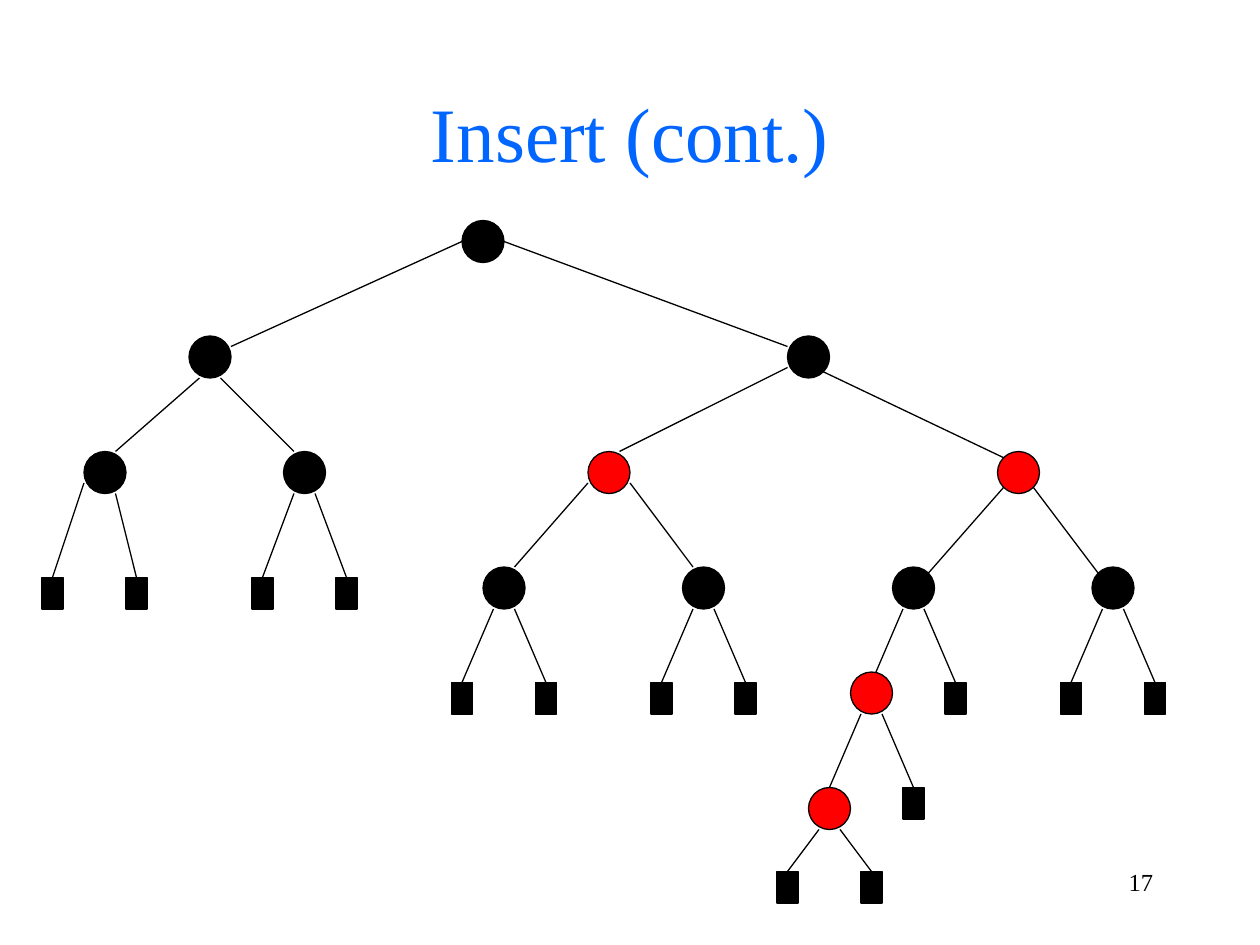
from lxml import etree
from pptx import Presentation
from pptx.dml.color import RGBColor
from pptx.enum.shapes import MSO_CONNECTOR, MSO_SHAPE
from pptx.enum.text import MSO_ANCHOR, PP_ALIGN
from pptx.oxml.ns import qn
from pptx.util import Pt

PX = 7620  # EMU per px, 120 px to the inch
STRAIGHT = MSO_CONNECTOR.STRAIGHT
CIRCLE, RECTANGLE = MSO_SHAPE.OVAL, MSO_SHAPE.RECTANGLE
TOP, MIDDLE = MSO_ANCHOR.TOP, MSO_ANCHOR.MIDDLE
CENTER, RIGHT = PP_ALIGN.CENTER, PP_ALIGN.RIGHT
TOP_SITE = 0
FONT = "Times New Roman"
COLORS = {"black": "000000", "red": "FF0000", "title": "0066FF"}
LINE_WIDTH = Pt(0.75)
NODE_SIZE = 40
LEAF_WIDTH, LEAF_HEIGHT = 20, 30

prs = Presentation()
prs.slide_width, prs.slide_height = 1200 * PX, 900 * PX
slide = prs.slides.add_slide(prs.slide_layouts[6])


def add_tree_shape(kind, left, top, width, height, color):
    shape = slide.shapes.add_shape(kind, left * PX, top * PX, width * PX, height * PX)
    shape.shadow.inherit = False
    shape.fill.solid()
    shape.fill.fore_color.rgb = RGBColor.from_string(COLORS[color])
    shape.line.color.rgb = RGBColor.from_string(COLORS["black"])
    shape.line.width = LINE_WIDTH
    return shape


def add_edge(x1, y1, x2, y2):
    edge = slide.shapes.add_connector(STRAIGHT, x1 * PX, y1 * PX, x2 * PX, y2 * PX)
    edge.line.color.rgb = RGBColor.from_string(COLORS["black"])
    edge.line.width = LINE_WIDTH
    etree.SubElement(edge._element.spPr, qn("a:effectLst"))
    return edge


# Title and page number: text, left, top, width, height, size, color, alignment, anchor
texts = [
    ("Insert (cont.)", 90, 50, 1020, 150, 44, "title", CENTER, MIDDLE),
    ("17", 860, 820, 250, 60, 14, "black", RIGHT, TOP),
]
for text, left, top, width, height, size, color, alignment, anchor in texts:
    frame = slide.shapes.add_textbox(left * PX, top * PX, width * PX, height * PX).text_frame
    frame.word_wrap = True
    frame.vertical_anchor = anchor
    paragraph = frame.paragraphs[0]
    paragraph.alignment = alignment
    run = paragraph.add_run()
    run.text = text
    run.font.name = FONT
    run.font.size = Pt(size)
    run.font.color.rgb = RGBColor.from_string(COLORS[color])

# Leaf edges: start x, start y, leaf center x, leaf top
leaf_edges = [(80, 460, 50, 550), (110, 470, 130, 550)]

# Evenly forked leaves: parent center x, parent bottom, leaf top, sides with a leaf
forks = [
    (290, 470, 550, (-1, 1)),
    (480, 580, 650, (-1, 1)),
    (670, 580, 650, (-1, 1)),
    (870, 580, 650, (1,)),
    (1060, 580, 650, (-1, 1)),
    (830, 680, 750, (1,)),
    (790, 790, 830, (-1, 1)),
]
for parent_x, parent_bottom, leaf_top, sides in forks:
    for side in sides:
        leaf_edges.append((parent_x + 10 * side, parent_bottom, parent_x + 40 * side, leaf_top))

for start_x, start_y, leaf_x, leaf_top in leaf_edges:
    leaf = add_tree_shape(RECTANGLE, leaf_x - LEAF_WIDTH // 2, leaf_top,
                          LEAF_WIDTH, LEAF_HEIGHT, "black")
    add_edge(start_x, start_y, leaf_x, leaf_top).end_connect(leaf, TOP_SITE)

# Edges between inner nodes: start x, start y, end x, end y
node_edges = [
    (440, 230, 220, 330), (480, 230, 750, 330),
    (190, 360, 110, 430), (210, 360, 280, 430),
    (750, 350, 590, 430), (784, 354, 956, 436),
    (560, 460, 490, 540), (600, 460, 660, 540),
    (956, 464, 884, 546), (984, 464, 1046, 546),
    (860, 580, 830, 650), (820, 680, 790, 750),
]
for points in node_edges:
    add_edge(*points)

# Inner nodes by level: top, then (center x, color)
levels = [
    (210, [(460, "black")]),
    (320, [(200, "black"), (770, "black")]),
    (430, [(100, "black"), (290, "black"), (580, "red"), (970, "red")]),
    (540, [(480, "black"), (670, "black"), (870, "black"), (1060, "black")]),
    (640, [(830, "red")]),
    (750, [(790, "red")]),
]
for level_top, nodes in levels:
    for center_x, color in nodes:
        add_tree_shape(CIRCLE, center_x - NODE_SIZE // 2, level_top, NODE_SIZE, NODE_SIZE, color)

prs.save("out.pptx")
